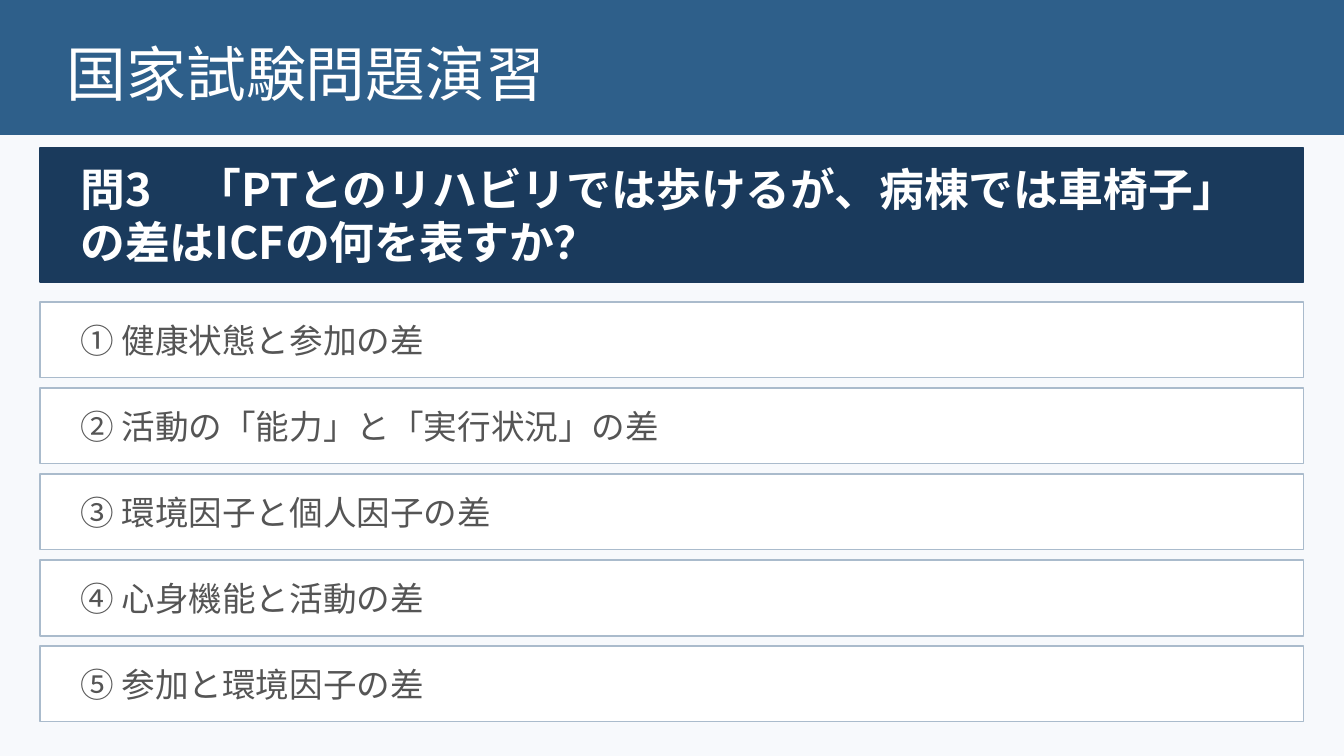
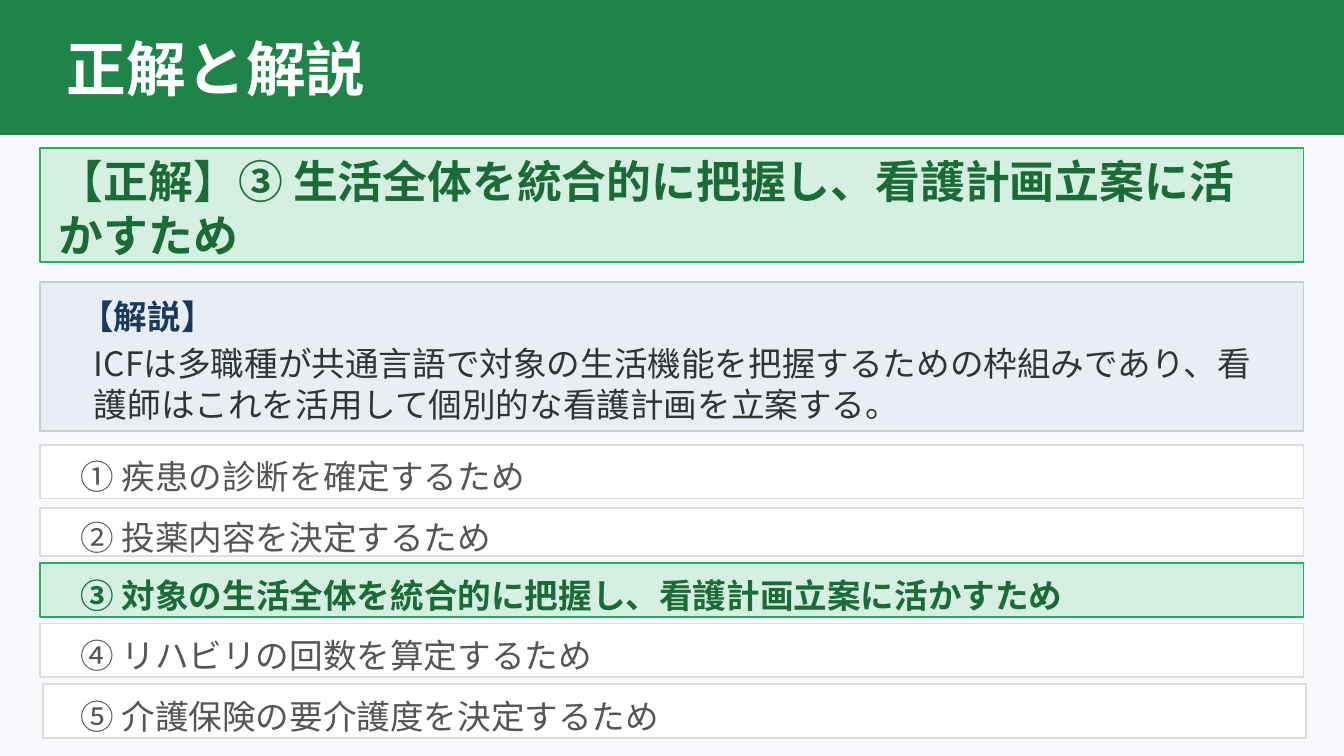
from pptx import Presentation
from pptx.dml.color import RGBColor
from pptx.enum.shapes import MSO_SHAPE
from pptx.enum.text import MSO_ANCHOR
from pptx.oxml.ns import qn
from pptx.util import Inches, Pt
from lxml import etree

RECT = MSO_SHAPE.RECTANGLE
MIDDLE = MSO_ANCHOR.MIDDLE

SLIDE_W, SLIDE_H = Inches(10), Inches(5.625)
CELL = SLIDE_W / 100
FONT = "Noto Sans CJK JP"
TITLE_SIZE, LEAD_SIZE, BODY_SIZE = 32, 24, 18

PAPER, WHITE = "F7F9FC", "FFFFFF"
BLUE, NAVY, PALE_BLUE = "2E5F8A", "1A3A5C", "E8EEF4"
GREEN, DARK_GREEN, MID_GREEN, PALE_GREEN = "1E8449", "1A6B37", "27AE60", "D5F0E0"
INK, GREY = "333333", "555555"
BLUE_EDGE, PANEL_EDGE, ROW_EDGE = "AABBCC", "CCCCCC", "DDDDDD"

BOX_X, BOX_W = 3, 94
TEXT_X, TEXT_W = 5, 90
BAND_H = 10

QUESTION = "問3　「PTとのリハビリでは歩けるが、病棟では車椅子」の差はICFの何を表すか？"
CHOICES = [
    "① 健康状態と参加の差",
    "② 活動の「能力」と「実行状況」の差",
    "③ 環境因子と個人因子の差",
    "④ 心身機能と活動の差",
    "⑤ 参加と環境因子の差",
]
ANSWER = "【正解】③ 生活全体を統合的に把握し、看護計画立案に活かすため"
EXPLANATION = (
    "ICFは多職種が共通言語で対象の生活機能を把握するための枠組みであり、"
    "看護師はこれを活用して個別的な看護計画を立案する。"
)
REVIEWED = [
    ("① 疾患の診断を確定するため", 3, 33.1, 4),
    ("② 投薬内容を決定するため", 3, 37.8, 3.6),
    ("③ 対象の生活全体を統合的に把握し、看護計画立案に活かすため", 3, 41.9, 4),
    ("④ リハビリの回数を算定するため", 3, 46.4, 4),
    ("⑤ 介護保険の要介護度を決定するため", 3.2, 50.9, 4),
]
CORRECT = 2


def rgb(value):
    """Turn a hex string into a colour."""
    return RGBColor.from_string(value)


def cells(*counts):
    """Turn counts of grid cells into lengths."""
    return [round(n * CELL) for n in counts]


def add_box(slide, x, y, w, h, fill, edge):
    """Draw a filled rectangle with a thin edge."""
    sp = slide.shapes.add_shape(RECT, *cells(x, y, w, h))
    sp.shadow.inherit = False
    sp.fill.solid()
    sp.fill.fore_color.rgb = rgb(fill)
    sp.line.color.rgb = rgb(edge)
    sp.line.width = Pt(1)


def add_text(slide, text, x, y, w, h, size, color, bold=False):
    """Write one vertically centred paragraph."""
    tf = slide.shapes.add_textbox(*cells(x, y, w, h)).text_frame
    tf.word_wrap = True
    tf.vertical_anchor = MIDDLE
    tf.text = text
    r = tf.paragraphs[0].runs[0]
    r.font.name = FONT
    r.font.size = Pt(size)
    r.font.bold = bold
    r.font.color.rgb = rgb(color)
    etree.SubElement(r.font._element, qn("a:ea"), typeface=FONT)


def add_choice(slide, text, x, y, h, text_h, drop, fill, edge, color, bold=False):
    """Draw an answer row, its text lowered by drop from the row's middle."""
    add_box(slide, x, y, BOX_W, h, fill, edge)
    text_y = y + (h - text_h) / 2 + drop
    add_text(slide, text, TEXT_X, text_y, TEXT_W, text_h, BODY_SIZE, color, bold)


def add_slide(prs, title, band, title_y=0, bold=False):
    """Add a slide with its background and title band."""
    slide = prs.slides.add_slide(prs.slide_layouts[6])
    slide.background.fill.solid()
    slide.background.fill.fore_color.rgb = rgb(PAPER)
    add_box(slide, 0, 0, 100, BAND_H, band, band)
    add_text(slide, title, 4, title_y, 92, BAND_H, TITLE_SIZE, WHITE, bold)
    return slide


def question_slide(prs):
    """Build the question with its five choices."""
    slide = add_slide(prs, "国家試験問題演習", BLUE, title_y=0.4)
    add_box(slide, BOX_X, 11, BOX_W, 10, NAVY, NAVY)
    add_text(slide, QUESTION, TEXT_X, 11, TEXT_W, 10, LEAD_SIZE, WHITE, True)
    for i, choice in enumerate(CHOICES):
        add_choice(slide, choice, BOX_X, 22.5 + 6.4 * i, 5.6, 5, 0,
                   WHITE, BLUE_EDGE, GREY)


def answer_slide(prs):
    """Build the answer, its explanation and the marked choices."""
    slide = add_slide(prs, "正解と解説", GREEN, bold=True)
    add_box(slide, BOX_X, 11, BOX_W, 8.5, PALE_GREEN, MID_GREEN)
    add_text(slide, ANSWER, 3.4, 11.2, TEXT_W, 8.5, LEAD_SIZE, DARK_GREEN, True)
    add_box(slide, BOX_X, 21, BOX_W, 11.1, PALE_BLUE, PANEL_EDGE)
    add_text(slide, "【解説】", TEXT_X, 21.8, TEXT_W, 3.5, BODY_SIZE, NAVY, True)
    add_text(slide, EXPLANATION, 6, 24.9, TEXT_W, 7.3, BODY_SIZE, INK)
    for i, (choice, x, y, h) in enumerate(REVIEWED):
        right = i == CORRECT
        style = (PALE_GREEN, MID_GREEN, DARK_GREEN) if right else (WHITE, ROW_EDGE, GREY)
        add_choice(slide, choice, x, y, h, 3.5, 0.35, *style, bold=right)


def main():
    """Build and save the presentation."""
    prs = Presentation()
    prs.slide_width, prs.slide_height = SLIDE_W, SLIDE_H
    question_slide(prs)
    answer_slide(prs)
    prs.save("out.pptx")


if __name__ == "__main__":
    main()
